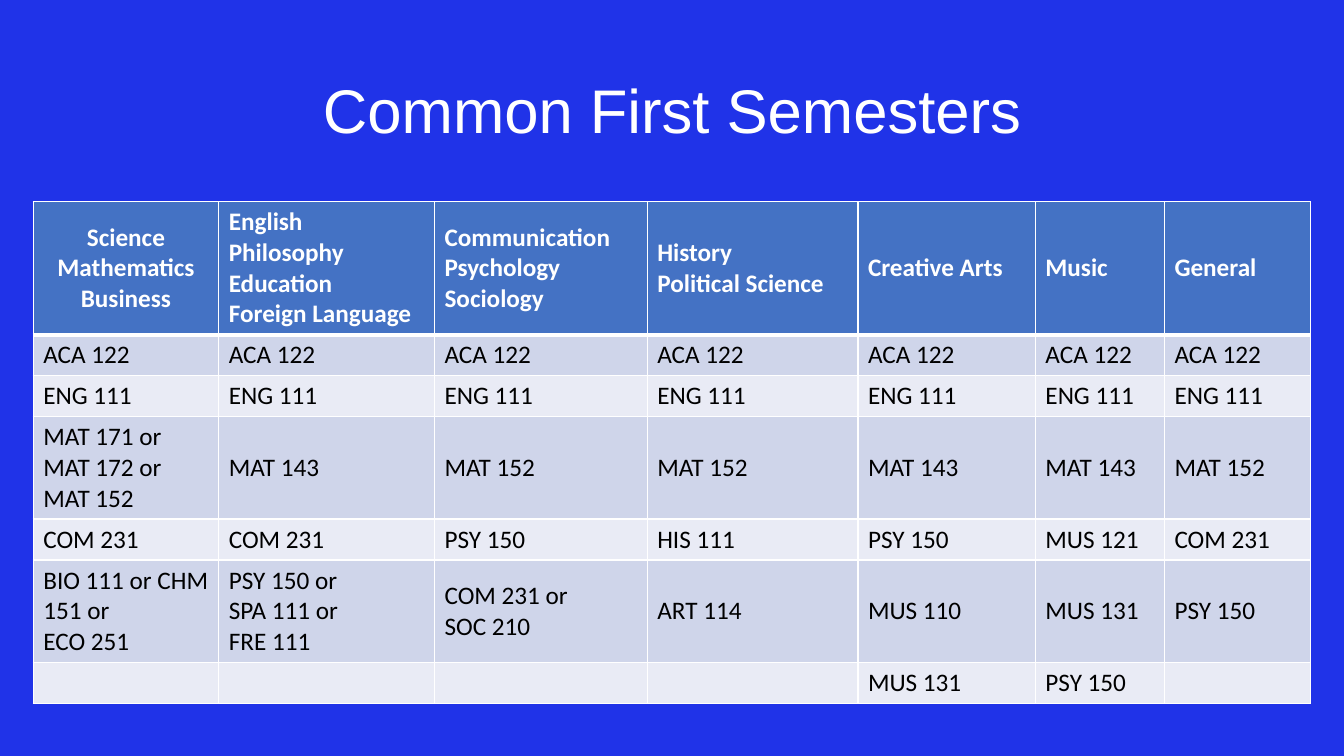
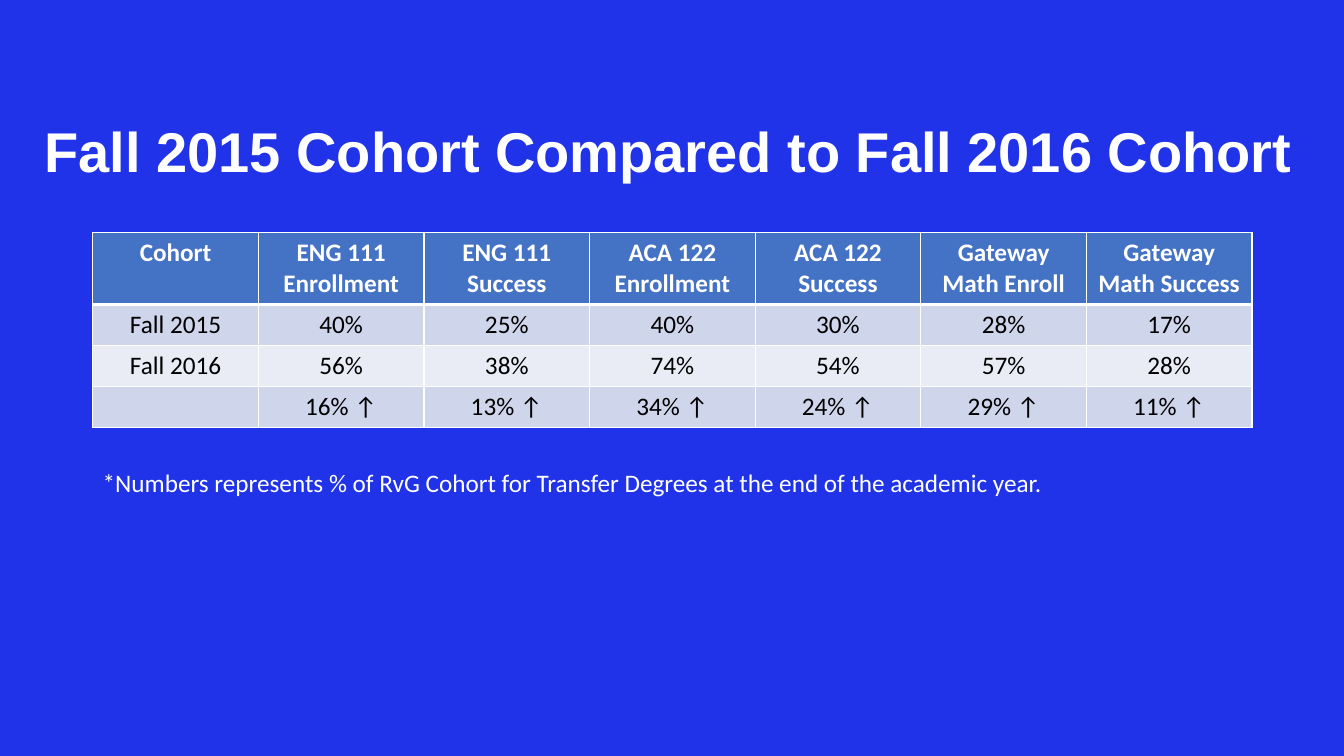
from lxml import etree
from pptx import Presentation
from pptx.dml.color import RGBColor
from pptx.enum.text import MSO_ANCHOR, MSO_AUTO_SIZE, PP_ALIGN
from pptx.oxml.ns import qn
from pptx.util import Inches, Pt

LEFT, CENTER = PP_ALIGN.LEFT, PP_ALIGN.CENTER
TOP, MIDDLE = MSO_ANCHOR.TOP, MSO_ANCHOR.MIDDLE
NO_FIT, GROW = MSO_AUTO_SIZE.NONE, MSO_AUTO_SIZE.SHAPE_TO_FIT_TEXT

BLUE, WHITE, BLACK = "2033E8", "FFFFFF", "000000"
HEADER, BANDS = "4472C4", ("CFD5EA", "E9EBF5")
TITLE_FONT, BODY_FONT, BODY_SIZE = "Arial", "Calibri", 18
LINE_HEIGHT, CELL_PADDING = 22, 7.2  # points
THIN, THICK = 1, 3  # border widths in points
TITLE_ONLY = 5

SEMESTERS = [
    ["Science\nMathematics\nBusiness",
     "English\nPhilosophy\nEducation\nForeign Language",
     "Communication\nPsychology\nSociology", "History\nPolitical Science",
     "Creative Arts", "Music", "General"],
    ["ACA 122"] * 7,
    ["ENG 111"] * 7,
    ["MAT 171 or\nMAT 172 or\nMAT 152", "MAT 143", "MAT 152", "MAT 152",
     "MAT 143", "MAT 143", "MAT 152"],
    ["COM 231", "COM 231", "PSY 150", "HIS 111", "PSY 150", "MUS 121", "COM 231"],
    ["BIO 111 or CHM 151 or\nECO 251", "PSY 150 or\nSPA 111 or\nFRE 111",
     "COM 231 or\nSOC 210", "ART 114", "MUS 110", "MUS 131", "PSY 150"],
    ["", "", "", "", "MUS 131", "PSY 150", ""],
]
COHORTS = [
    ["Cohort", "ENG 111\nEnrollment", "ENG 111\nSuccess", "ACA 122\nEnrollment",
     "ACA 122\nSuccess", "Gateway Math Enroll", "Gateway Math Success"],
    ["Fall 2015", "40%", "25%", "40%", "30%", "28%", "17%"],
    ["Fall 2016", "56%", "38%", "74%", "54%", "57%", "28%"],
    ["", "16% ↑", "13% ↑", "34% ↑", "24% ↑", "29% ↑", "11% ↑"],
]


def color(value):
    return RGBColor.from_string(value)


def paint(target, value):
    target.fill.solid()
    target.fill.fore_color.rgb = color(value)


def format_text(frame, font, size, ink, bold=False, align=LEFT):
    for para in frame.paragraphs:
        para.alignment = align
        for span in para.runs:
            span.font.name = font
            span.font.size = Pt(size)
            span.font.bold = bold
            span.font.color.rgb = color(ink)


def add_page(deck, title, box, size, bold=False):
    """Add a slide with its title in the given box."""
    page = deck.slides.add_slide(deck.slide_layouts[TITLE_ONLY])
    shape = page.shapes.title
    shape.left, shape.top, shape.width, shape.height = map(Inches, box)
    frame = shape.text_frame
    frame.text = title
    frame.auto_size = NO_FIT
    frame.vertical_anchor = MIDDLE
    frame.paragraphs[0].line_spacing = 0.9
    format_text(frame, TITLE_FONT, size, WHITE, bold, CENTER)
    return page


def add_borders(cell, row):
    """Draw white cell edges, with a thick one under the header row."""
    widths = {"a:lnL": THIN, "a:lnR": THIN,
              "a:lnT": THICK if row == 1 else THIN,
              "a:lnB": THICK if row == 0 else THIN}
    properties = cell._tc.get_or_add_tcPr()
    for tag, width in widths.items():
        edge = etree.SubElement(properties, qn(tag), w=str(Pt(width)))
        fill = etree.SubElement(edge, qn("a:solidFill"))
        etree.SubElement(fill, qn("a:srgbClr"), val=WHITE)


def add_grid(page, left, top, widths, line_counts, rows, anchor, align_at):
    """Add a banded table; align_at(row, column) gives a cell's alignment."""
    heights = [Pt(CELL_PADDING + LINE_HEIGHT * count) for count in line_counts]
    table = page.shapes.add_table(
        len(rows), len(widths), Inches(left), Inches(top),
        Inches(sum(widths)), sum(heights)).table
    table.horz_banding = False
    for column, width in zip(table.columns, widths):
        column.width = Inches(width)
    for r, (height, texts) in enumerate(zip(heights, rows)):
        table.rows[r].height = height
        is_header = r == 0
        for c, text in enumerate(texts):
            cell = table.cell(r, c)
            add_borders(cell, r)
            paint(cell, HEADER if is_header else BANDS[(r - 1) % 2])
            cell.vertical_anchor = anchor
            cell.text_frame.text = text
            format_text(cell.text_frame, BODY_FONT, BODY_SIZE,
                        WHITE if is_header else BLACK, is_header, align_at(r, c))


def add_note(page, text, box):
    frame = page.shapes.add_textbox(*map(Inches, box)).text_frame
    frame.text = text
    frame.word_wrap = False
    frame.auto_size = GROW
    format_text(frame, BODY_FONT, BODY_SIZE, WHITE)


def semesters_page(deck):
    page = add_page(deck, "Common First Semesters", (0.92, 0.4, 11.5, 1.45), 44)
    add_grid(page, 0.33, 2, [1.84, 2.14, 2.11, 2.09, 1.76, 1.28, 1.45],
             [4, 1, 1, 3, 1, 3, 1], SEMESTERS, MIDDLE,
             lambda row, column: CENTER if row == column == 0 else LEFT)


def cohorts_page(deck):
    page = add_page(deck, "Fall 2015 Cohort Compared to Fall 2016 Cohort",
                    (0.29, 0.76, 12.67, 1.55), 40, bold=True)
    add_grid(page, 0.92, 2.31, [11.5 / 7] * 7, [2, 1, 1, 1], COHORTS, TOP,
             lambda row, column: CENTER)
    add_note(page, "*Numbers represents % of RvG Cohort for Transfer Degrees "
             "at the end of the academic year.", (0.92, 4.59, 9.53, 0.4))


def main():
    deck = Presentation()
    deck.slide_width, deck.slide_height = Inches(13.33), Inches(7.5)
    paint(deck.slide_master.background, BLUE)
    semesters_page(deck)
    cohorts_page(deck)
    deck.save("out.pptx")


if __name__ == "__main__":
    main()
